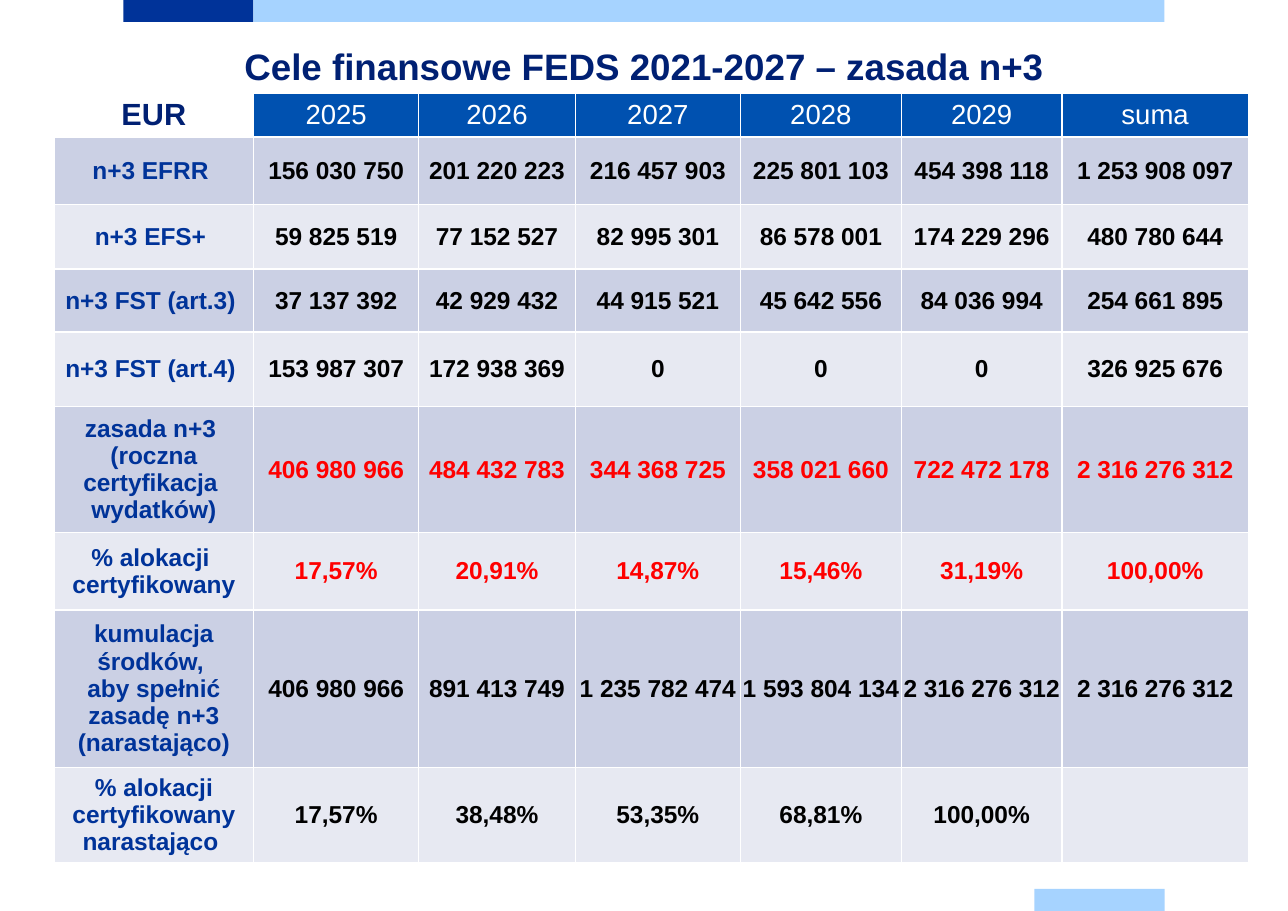
import pptx
import pptx.dml.color
import pptx.enum.shapes
import pptx.enum.text
import pptx.util
from lxml import etree
from pptx.oxml.ns import qn

Pt = pptx.util.Pt
RGBColor = pptx.dml.color.RGBColor
CENTER = pptx.enum.text.PP_ALIGN.CENTER
MIDDLE = pptx.enum.text.MSO_ANCHOR.MIDDLE

WHITE = RGBColor(0xFF, 0xFF, 0xFF)
BLACK = RGBColor(0x00, 0x00, 0x00)
RED = RGBColor(0xFF, 0x00, 0x00)
NAVY = RGBColor(0x00, 0x20, 0x73)
BLUE = RGBColor(0x00, 0x33, 0x99)
LIGHT_BLUE = RGBColor(0xA6, 0xD3, 0xFF)
HEADER_BLUE = RGBColor(0x00, 0x51, 0xB0)
BANDS = (RGBColor(0xCB, 0xD0, 0xE4), RGBColor(0xE7, 0xE9, 0xF2))

PAGE_WIDTH, PAGE_HEIGHT = 841.7, 595.4
TITLE = "Cele finansowe FEDS 2021-2027 – zasada n+3"
HEADER = ("EUR", "2025", "2026", "2027", "2028", "2029", "suma")
ROWS = [
    ("n+3 EFRR ", BLACK, ("156 030 750", "201 220 223", "216 457 903",
                          "225 801 103", "454 398 118", "1 253 908 097")),
    ("n+3 EFS+ ", BLACK, ("59 825 519", "77 152 527", "82 995 301",
                          "86 578 001", "174 229 296", "480 780 644")),
    ("n+3 FST (art.3) ", BLACK, ("37 137 392", "42 929 432", "44 915 521",
                                 "45 642 556", "84 036 994", "254 661 895")),
    ("n+3 FST (art.4) ", BLACK, ("153 987 307", "172 938 369", "0", "0", "0", "326 925 676")),
    ("zasada n+3 \n(roczna certyfikacja \nwydatków)", RED,
     ("406 980 966", "484 432 783", "344 368 725",
      "358 021 660", "722 472 178", "2 316 276 312")),
    ("% alokacji \vcertyfikowany", RED,
     ("17,57%", "20,91%", "14,87%", "15,46%", "31,19%", "100,00%")),
    ("kumulacja środków, \naby spełnić zasadę n+3 (narastająco)", BLACK,
     ("406 980 966", "891 413 749", "1 235 782 474",
      "1 593 804 134", "2 316 276 312", "2 316 276 312")),
    ("% alokacji certyfikowany narastająco ", BLACK,
     ("17,57%", "38,48%", "53,35%", "68,81%", "100,00%", "")),
]
COLUMN_WIDTHS = (130.3, 108, 102.2, 108, 105.1, 105.1, 121.7)
ROW_HEIGHTS = (28.8, 44, 42.4, 41.2, 48.8, 82.4, 50.5, 103, 61.9)
TABLE_LEFT, TABLE_TOP = 35.4, 60.7

BAR_HEIGHT = 14.4
BAR_LEFT, BAR_RIGHT, BAR_STEP = 80.6, 761, 85
BARS = [
    (BAR_LEFT, 0, BAR_STEP, BLUE),
    (BAR_LEFT + BAR_STEP, 0, BAR_RIGHT - BAR_LEFT - BAR_STEP, LIGHT_BLUE),
    (BAR_RIGHT - BAR_STEP, PAGE_HEIGHT - BAR_HEIGHT, BAR_STEP, LIGHT_BLUE),
]


def style_paragraph(para, size, color, bold):
    para.alignment = CENTER
    para.font.name = "Arial"
    para.font.size = Pt(size)
    para.font.bold = bold
    para.font.color.rgb = color


def add_borders(cell):
    properties = cell._tc.get_or_add_tcPr()
    for position, side in enumerate(("lnL", "lnR", "lnT", "lnB")):
        line = etree.Element(qn("a:" + side), w=str(Pt(1)))
        fill = etree.SubElement(line, qn("a:solidFill"))
        etree.SubElement(fill, qn("a:srgbClr"), val=str(WHITE))
        properties.insert(position, line)


def fill_cell(cell, text, size, color, bold, background):
    cell.margin_left = cell.margin_right = cell.margin_top = cell.margin_bottom = 0
    cell.vertical_anchor = MIDDLE
    if background is None:
        cell.fill.background()
    else:
        cell.fill.solid()
        cell.fill.fore_color.rgb = background
    add_borders(cell)
    cell.text_frame.text = text
    for para in cell.text_frame.paragraphs:
        style_paragraph(para, size, color, bold)


def add_bars(page):
    for left, top, width, color in BARS:
        bar = page.shapes.add_shape(pptx.enum.shapes.MSO_SHAPE.RECTANGLE,
                                    Pt(left), Pt(top), Pt(width), Pt(BAR_HEIGHT))
        bar.shadow.inherit = False
        bar.fill.solid()
        bar.fill.fore_color.rgb = color
        bar.line.fill.background()


def add_title(page):
    title = page.shapes.title
    title.left, title.top = Pt(BAR_LEFT), Pt(21.6)
    title.width, title.height = Pt(BAR_RIGHT - BAR_LEFT), Pt(39.6)
    frame = title.text_frame
    frame.margin_left = frame.margin_right = frame.margin_top = frame.margin_bottom = 0
    frame.vertical_anchor = pptx.enum.text.MSO_ANCHOR.TOP
    frame.auto_size = pptx.enum.text.MSO_AUTO_SIZE.NONE
    frame.text = TITLE
    para = frame.paragraphs[0]
    para.line_spacing = Pt(36)
    style_paragraph(para, 24, NAVY, True)


def add_targets(page):
    table = page.shapes.add_table(len(ROW_HEIGHTS), len(COLUMN_WIDTHS),
                                  Pt(TABLE_LEFT), Pt(TABLE_TOP),
                                  Pt(sum(COLUMN_WIDTHS)), Pt(sum(ROW_HEIGHTS))).table
    table.first_row = table.horz_banding = False
    for column, width in zip(table.columns, COLUMN_WIDTHS):
        column.width = Pt(width)
    for row, height in zip(table.rows, ROW_HEIGHTS):
        row.height = Pt(height)

    fill_cell(table.cell(0, 0), HEADER[0], 20, NAVY, True, None)
    for column, year in enumerate(HEADER[1:], 1):
        fill_cell(table.cell(0, column), year, 18, WHITE, False, HEADER_BLUE)
    for row, (label, color, values) in enumerate(ROWS, 1):
        band = BANDS[(row - 1) % 2]
        fill_cell(table.cell(row, 0), label, 16, BLUE, True, band)
        for column, value in enumerate(values, 1):
            fill_cell(table.cell(row, column), value, 16, color, True, band)


def main():
    deck = pptx.Presentation()
    deck.slide_width, deck.slide_height = Pt(PAGE_WIDTH), Pt(PAGE_HEIGHT)
    page = deck.slides.add_slide(deck.slide_layouts[5])
    add_bars(page)
    add_title(page)
    add_targets(page)
    deck.save("out.pptx")


if __name__ == "__main__":
    main()
